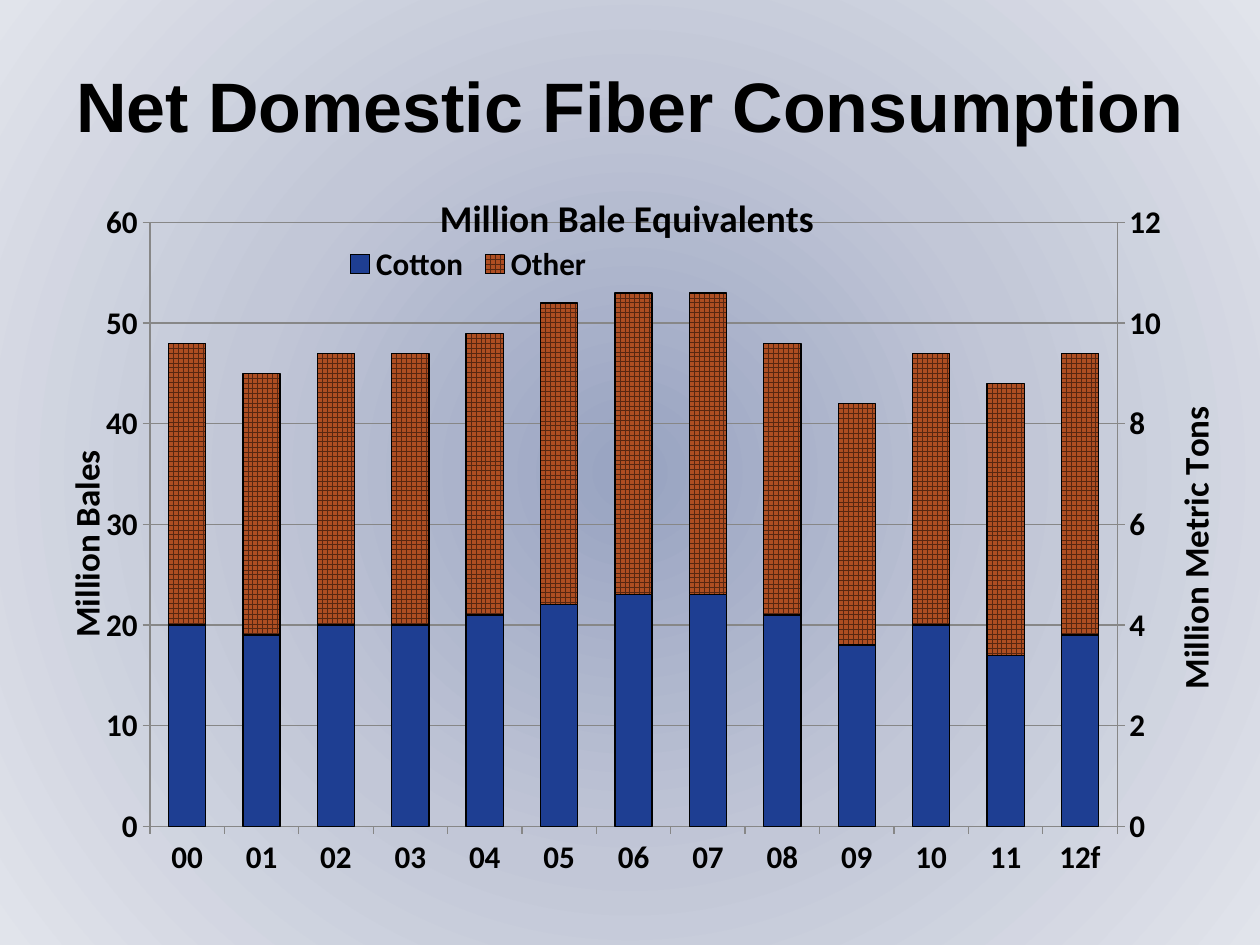
"""Build the fiber consumption slide with a two-axis stacked column chart."""
import copy
from dataclasses import dataclass

import pptx
import pptx.chart.data
import pptx.dml.color
import pptx.enum.chart
import pptx.enum.dml
import pptx.enum.text
import pptx.oxml
import pptx.oxml.ns
import pptx.util

qn = pptx.oxml.ns.qn
SCALE = 914400 / 126


@dataclass(frozen=True)
class Theme:
    ink: str = "000000"
    grid: str = "878787"
    cotton: str = "1E3E92"
    other: str = "AE4E22"
    weave: str = "572711"
    glow: tuple = ((0, "98A3C1"), (50, "C2C7D7"), (100, "E1E4EB"))
    head: str = "Arial"
    body: str = "Calibri"
    big: float = 40
    top: float = 21.6
    side: float = 20
    base: float = 18


THEME = Theme()
CATS = [f"{year:02d}" for year in range(12)] + ["12f"]
LEFT = {
    "Cotton": (20, 19, 20, 20, 21, 22, 23, 23, 21, 18, 20, 17, 19),
    "Other": (28, 26, 27, 27, 28, 30, 30, 30, 27, 24, 27, 27, 28),
}
RIGHT = {
    "Series 3": (4.4, 4.1, 4.4, 4.5, 4.5, 4.9, 4.9, 4.9, 4.6, 4, 4.4, 3.8, 4.1),
    "Series 4": (6.1, 5.6, 5.8, 6, 6.2, 6.5, 6.5, 6.5, 5.8, 5.3, 6, 5.8, 6.1),
}


def px(num):
    return pptx.util.Emu(round(num * SCALE))


def rgb(code):
    return pptx.dml.color.RGBColor.from_string(code)


def style(font, size, face=THEME.body, color=THEME.ink):
    font.name, font.size, font.bold = face, pptx.util.Pt(size), True
    font.color.rgb = rgb(color)


def write(frame, text, size, turn=None, **look):
    frame.text = text
    para = frame.paragraphs[0]
    para.alignment = pptx.enum.text.PP_ALIGN.CENTER
    style(para.runs[0].font, size, **look)
    if turn is not None:
        body = frame._txBody.find(qn("a:bodyPr"))
        body.set("rot", str(turn * 60000))
        body.set("vert", "horz")


def parse(xml):
    spaces = pptx.oxml.ns.nsdecls("a", "c", "p")
    name, rest = xml[:xml.index(">")], xml[xml.index(">"):]
    return pptx.oxml.parse_xml(f"{name} {spaces}{rest}")


def paint(slide):
    stops = "".join(f'<a:gs pos="{pos * 1000}"><a:srgbClr val="{code}"/></a:gs>'
                    for pos, code in THEME.glow)
    rect = " ".join(f'{side}="50000"' for side in "ltrb")
    slide._element.cSld.insert(0, parse(
        f'<p:bg><p:bgPr><a:gradFill rotWithShape="1"><a:gsLst>{stops}</a:gsLst>'
        f'<a:path path="circle"><a:fillToRect {rect}/></a:path></a:gradFill>'
        '<a:effectLst/></p:bgPr></p:bg>'))


def place(node, inner=False, **spots):
    for old in node.findall(qn("c:layout")):
        node.remove(old)
    target = '<c:layoutTarget val="inner"/>' if inner else ""
    modes = "".join(f'<c:{key}Mode val="edge"/>' for key in "xy")
    sizes = "".join(f'<c:{key} val="{val}"/>' for key, val in spots.items())
    box = parse(f"<c:layout><c:manualLayout>{target}{modes}{sizes}"
                "</c:manualLayout></c:layout>")
    over = node.find(qn("c:overlay"))
    if over is None:
        node.insert(0, box)
    else:
        over.addprevious(box)


def label(owner, text, size, x, y, turn=None):
    title = owner.chart_title if hasattr(owner, "chart_title") else owner.axis_title
    write(title.text_frame, text, size, turn)
    place(title._element, x=x, y=y)


def scale(axis, text, top, step, x, y):
    axis.minimum_scale, axis.maximum_scale, axis.major_unit = 0, top, step
    label(axis, text, THEME.side, x, y, turn=-90)


def rule(axis):
    axis.major_tick_mark = pptx.enum.chart.XL_TICK_MARK.OUTSIDE
    axis.format.line.color.rgb = rgb(THEME.grid)
    style(axis.tick_labels.font, THEME.base)


def split(chart):
    bars = chart.plots[0]._element
    twin = copy.deepcopy(bars)
    for node, keep in ((bars, slice(2, None)), (twin, slice(0, 2))):
        for ser in node.findall(qn("c:ser"))[keep]:
            node.remove(ser)
    bars.addnext(twin)
    cat, val = chart.category_axis._element, chart.value_axis._element
    side, base = copy.deepcopy(val), copy.deepcopy(cat)
    val.addnext(base)
    base.addnext(side)
    ids = "50010", "50020"
    for node, code in zip(twin.findall(qn("c:axId")), ids):
        node.set("val", code)
    for node, own, cross in ((base, *ids), (side, *ids[::-1])):
        node.find(qn("c:axId")).set("val", own)
        node.find(qn("c:crossAx")).set("val", cross)
    base.find(qn("c:delete")).set("val", "1")
    side.remove(side.find(qn("c:majorGridlines")))
    side.find(qn("c:axPos")).set("val", "r")
    side.find(qn("c:crosses")).set("val", "max")
    return pptx.chart.axis.ValueAxis(side)


def color(chart):
    cotton, other, *blank = [ser for plot in chart.plots for ser in plot.series]
    cotton.format.fill.solid()
    cotton.format.fill.fore_color.rgb = rgb(THEME.cotton)
    fill = other.format.fill
    fill.patterned()
    fill.pattern = pptx.enum.dml.MSO_PATTERN.LARGE_GRID
    fill.fore_color.rgb, fill.back_color.rgb = rgb(THEME.weave), rgb(THEME.other)
    for ser in (cotton, other):
        ser.format.line.color.rgb = rgb(THEME.ink)
        ser.format.line.width = pptx.util.Pt(0.75)
    for ser in blank:
        ser.format.fill.background()
        ser.format.line.fill.background()


def key(chart):
    chart.has_legend = True
    legend = chart.legend
    legend.position = pptx.enum.chart.XL_LEGEND_POSITION.TOP
    legend.include_in_layout = False
    style(legend.font, THEME.base)
    node = legend._element
    place(node, x=0.26, y=0.13, w=0.22, h=0.05)
    for num in range(len(LEFT), len(LEFT) + len(RIGHT)):
        node.find(qn("c:layout")).addprevious(parse(
            f'<c:legendEntry><c:idx val="{num}"/><c:delete val="1"/></c:legendEntry>'))


def draw(slide, box):
    data = pptx.chart.data.CategoryChartData()
    data.categories = CATS
    for name, vals in (LEFT | RIGHT).items():
        data.add_series(name, vals)
    kind = pptx.enum.chart.XL_CHART_TYPE.COLUMN_STACKED
    chart = slide.shapes.add_chart(kind, *map(px, box), data).chart
    style(chart.font, THEME.base)
    label(chart, "Million Bale Equivalents", THEME.top, 0.34, 0.05)
    plot = chart.plots[0]
    plot.gap_width, plot.overlap, plot.vary_by_categories = 100, 100, False
    cat, val = chart.category_axis, chart.value_axis
    rule(cat)
    cat.tick_label_position = pptx.enum.chart.XL_TICK_LABEL_POSITION.LOW
    rule(val)
    val.tick_labels.number_format = "0"
    val.tick_labels.number_format_is_linked = False
    val.has_major_gridlines = True
    val.major_gridlines.format.line.color.rgb = rgb(THEME.grid)
    side = split(chart)
    scale(val, "Million Bales", 60, 10, 0.02, 0.39)
    scale(side, "Million Metric Tons", 12, 2, 0.96, 0.33)
    color(chart)
    key(chart)
    place(chart._chartSpace.chart.plotArea, inner=True, x=0.1, y=0.1, w=0.82, h=0.8)


def head(slide, text, box):
    title = slide.shapes.title
    title.left, title.top, title.width, title.height = map(px, box)
    frame = title.text_frame
    frame.auto_size = pptx.enum.text.MSO_AUTO_SIZE.NONE
    frame.vertical_anchor = pptx.enum.text.MSO_ANCHOR.MIDDLE
    write(frame, text, THEME.big, face=THEME.head)


def main():
    deck = pptx.Presentation()
    deck.slide_width, deck.slide_height = px(1260), px(945)
    slide = deck.slides.add_slide(deck.slide_layouts[5])
    paint(slide)
    head(slide, "Net Domestic Fiber Consumption", (32, 42, 1196, 126))
    draw(slide, (32, 147, 1196, 755))
    deck.save("out.pptx")


if __name__ == "__main__":
    main()
